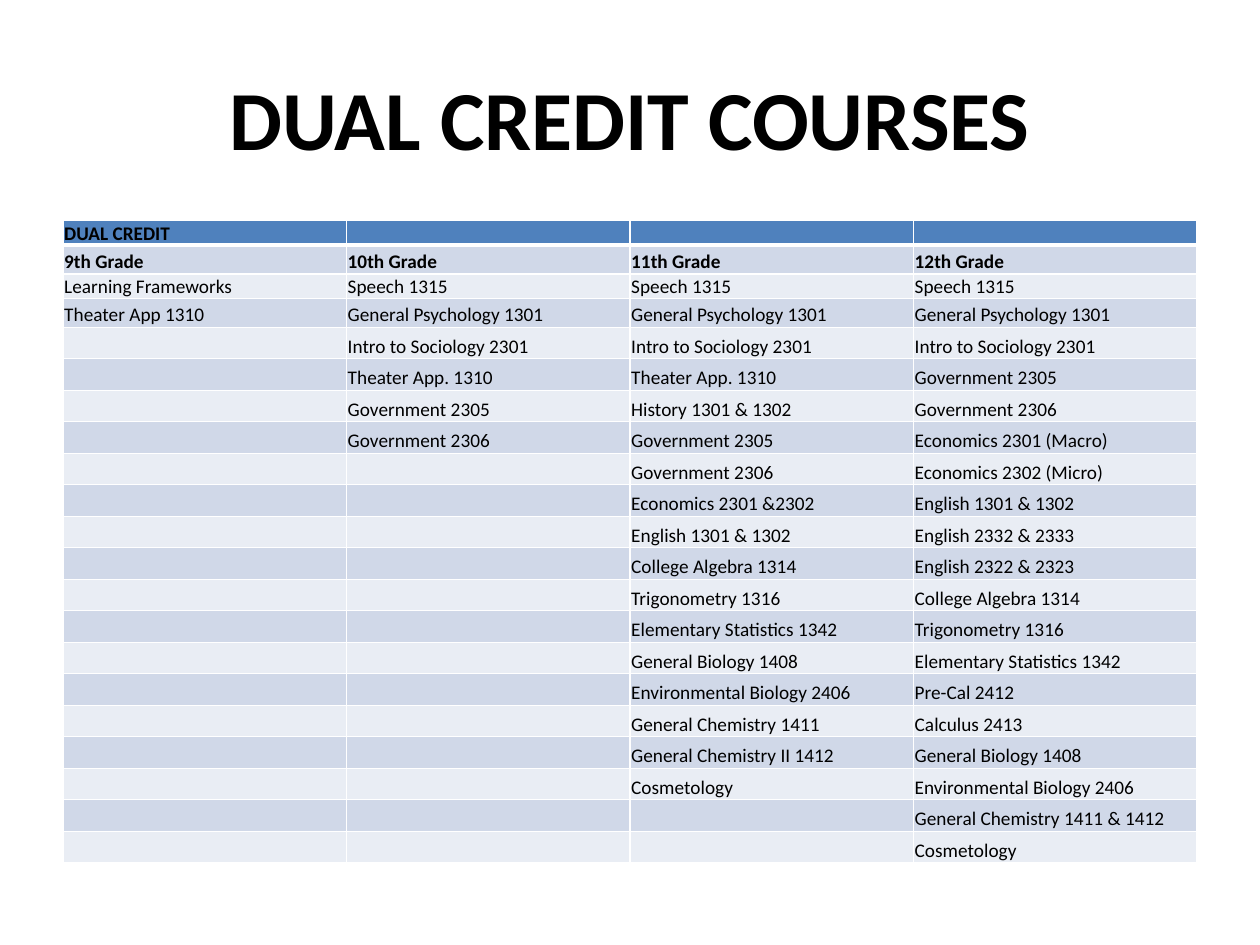
import dataclasses
import itertools

import lxml.etree
import pptx
import pptx.dml.color
import pptx.enum.text
import pptx.oxml.ns
import pptx.util

SLIDE_WIDTH = pptx.util.Inches(10)
SLIDE_HEIGHT = pptx.util.Inches(7.5)


@dataclasses.dataclass(frozen=True)
class Theme:
    font: str = "Calibri"
    title_size: int = 48
    table_size: int = 11
    text: str = "000000"
    header: str = "4F81BD"
    bands: tuple = ("E9EDF4", "D0D8E8")
    rule: str = "FFFFFF"
    thin_rule: int = 1
    thick_rule: int = 3


THEME = Theme()

TITLE = "DUAL CREDIT COURSES"
TABLE_HEADING = "DUAL CREDIT"
COURSES_BY_GRADE = {
    "9th Grade": ["Learning Frameworks", "Theater App 1310"],
    "10th Grade": [
        "Speech 1315", "General Psychology 1301", "Intro to Sociology 2301",
        "Theater App. 1310", "Government 2305", "Government 2306",
    ],
    "11th Grade": [
        "Speech 1315", "General Psychology 1301", "Intro to Sociology 2301",
        "Theater App. 1310", "History 1301 & 1302", "Government 2305",
        "Government 2306", "Economics 2301 &2302", "English 1301 & 1302",
        "College Algebra 1314", "Trigonometry 1316",
        "Elementary Statistics 1342", "General Biology 1408",
        "Environmental Biology 2406", "General Chemistry 1411",
        "General Chemistry II 1412", "Cosmetology",
    ],
    "12th Grade": [
        "Speech 1315", "General Psychology 1301", "Intro to Sociology 2301",
        "Government 2305", "Government 2306", "Economics 2301 (Macro)",
        "Economics 2302 (Micro)", "English 1301 & 1302",
        "English 2332 & 2333", "English 2322 & 2323",
        "College Algebra 1314", "Trigonometry 1316",
        "Elementary Statistics 1342", "Pre-Cal 2412", "Calculus 2413",
        "General Biology 1408", "Environmental Biology 2406",
        "General Chemistry 1411 & 1412", "Cosmetology",
    ],
}
TOP_ROW_HEIGHTS = [0.17, 0.23, 0.17, 0.23]
ROW_HEIGHT = 0.25


def add_run(paragraph, text, size, bold):
    run = paragraph.add_run()
    run.text = text
    run.font.name = THEME.font
    run.font.size = pptx.util.Pt(size)
    run.font.bold = bold
    run.font.color.rgb = pptx.dml.color.RGBColor.from_string(THEME.text)


def add_title(slide):
    title = slide.shapes.add_textbox(
        int(SLIDE_WIDTH * 0.05), int(SLIDE_HEIGHT * 0.04),
        int(SLIDE_WIDTH * 0.9), pptx.util.Inches(1.25))
    frame = title.text_frame
    frame.word_wrap = True
    frame.vertical_anchor = pptx.enum.text.MSO_ANCHOR.MIDDLE
    paragraph = frame.paragraphs[0]
    paragraph.alignment = pptx.enum.text.PP_ALIGN.CENTER
    add_run(paragraph, TITLE, THEME.title_size, True)


def add_rule(cell, side, width):
    properties = cell._tc.get_or_add_tcPr()
    qn = pptx.oxml.ns.qn
    line = lxml.etree.SubElement(
        properties, qn(f"a:ln{side}"), w=str(pptx.util.Pt(width)))
    fill = lxml.etree.SubElement(line, qn("a:solidFill"))
    lxml.etree.SubElement(fill, qn("a:srgbClr"), val=THEME.rule)


def set_empty_text_size(paragraph, size):
    """Keep an empty cell from stretching its row."""
    lxml.etree.SubElement(
        paragraph._p, pptx.oxml.ns.qn("a:endParaRPr"), sz=str(size * 100))


def fill_cell(cell, text, row):
    cell.margin_left = cell.margin_right = pptx.util.Inches(0.01)
    cell.margin_top = pptx.util.Inches(0.01)
    cell.margin_bottom = 0
    cell.vertical_anchor = pptx.enum.text.MSO_ANCHOR.BOTTOM
    top = THEME.thick_rule if row == 1 else THEME.thin_rule
    bottom = THEME.thick_rule if row == 0 else THEME.thin_rule
    widths = {"L": THEME.thin_rule, "R": THEME.thin_rule, "T": top, "B": bottom}
    for side, width in widths.items():
        add_rule(cell, side, width)
    color = THEME.header if row == 0 else THEME.bands[row % 2]
    cell.fill.solid()
    cell.fill.fore_color.rgb = pptx.dml.color.RGBColor.from_string(color)
    paragraph = cell.text_frame.paragraphs[0]
    if text:
        add_run(paragraph, text, THEME.table_size, row < 2)
    else:
        set_empty_text_size(paragraph, THEME.table_size)


def add_course_table(slide):
    grades = list(COURSES_BY_GRADE)
    course_rows = itertools.zip_longest(*COURSES_BY_GRADE.values(), fillvalue="")
    heading = [TABLE_HEADING] + [""] * (len(grades) - 1)
    rows = [heading, grades, *course_rows]
    heights = TOP_ROW_HEIGHTS + [ROW_HEIGHT] * (len(rows) - len(TOP_ROW_HEIGHTS))
    table = slide.shapes.add_table(
        len(rows), len(grades),
        int(SLIDE_WIDTH * 0.05), pptx.util.Inches(1.75),
        int(SLIDE_WIDTH * 0.9), pptx.util.Inches(sum(heights))).table
    for row, (texts, height) in enumerate(zip(rows, heights)):
        table.rows[row].height = pptx.util.Inches(height)
        for column, text in enumerate(texts):
            fill_cell(table.cell(row, column), text, row)


def main():
    presentation = pptx.Presentation()
    presentation.slide_width = SLIDE_WIDTH
    presentation.slide_height = SLIDE_HEIGHT
    slide = presentation.slides.add_slide(presentation.slide_layouts[6])
    add_title(slide)
    add_course_table(slide)
    presentation.save("out.pptx")


if __name__ == "__main__":
    main()
